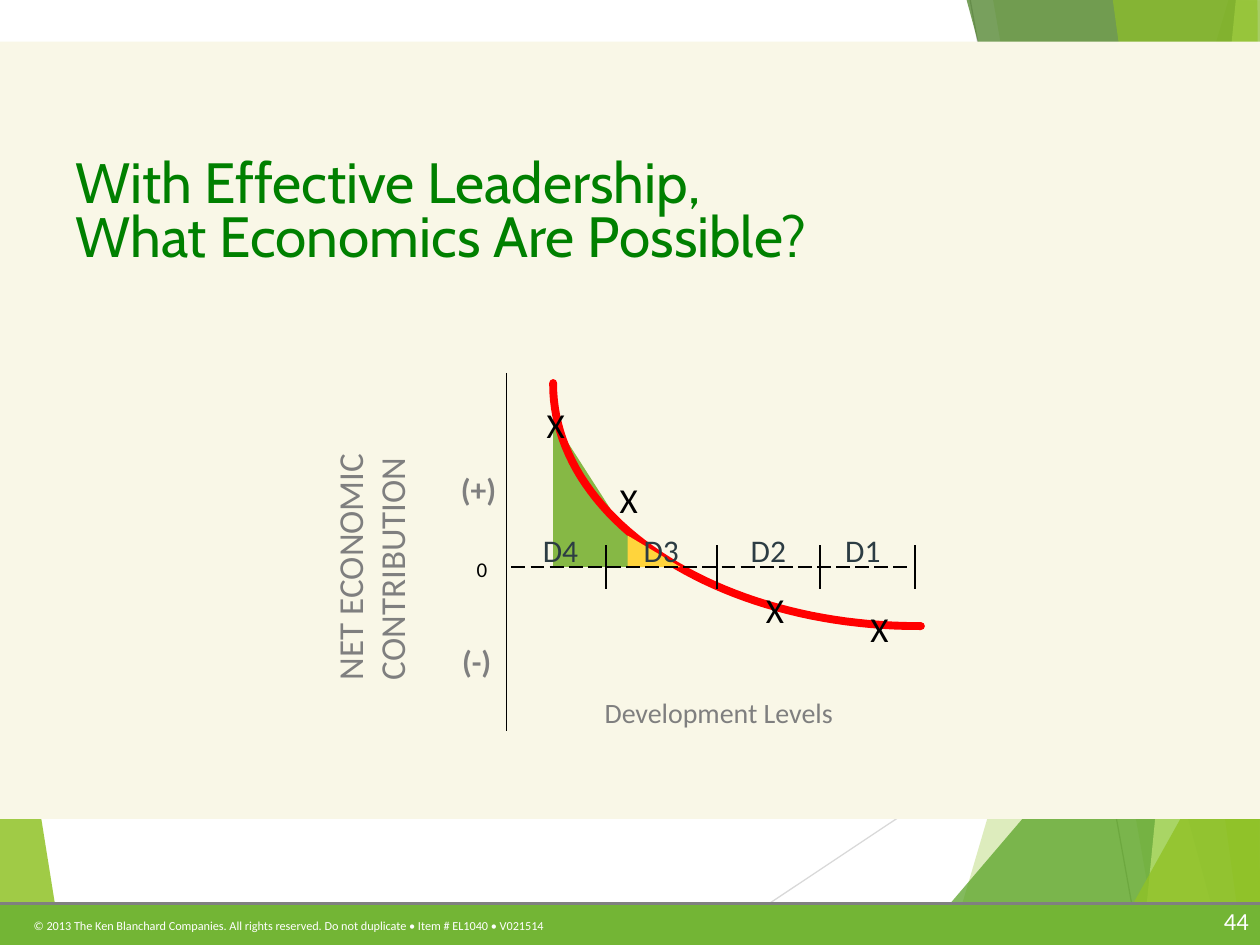
from math import cos, pi, sin

from lxml import etree
from pptx import Presentation
from pptx.dml.color import RGBColor
from pptx.enum.dml import MSO_LINE
from pptx.enum.shapes import MSO_CONNECTOR, MSO_SHAPE
from pptx.enum.text import MSO_ANCHOR, MSO_AUTO_SIZE, PP_ALIGN
from pptx.oxml.ns import qn
from pptx.util import Pt

RECT, TRIANGLE = MSO_SHAPE.RECTANGLE, MSO_SHAPE.RIGHT_TRIANGLE
STRAIGHT, LONG_DASH = MSO_CONNECTOR.STRAIGHT, MSO_LINE.LONG_DASH
LEFT, CENTER, RIGHT = PP_ALIGN.LEFT, PP_ALIGN.CENTER, PP_ALIGN.RIGHT
TOP, NO_FIT = MSO_ANCHOR.TOP, MSO_AUTO_SIZE.NONE

WIDTH, HEIGHT = 720, 540
ZERO_Y = 324
GRAY, BLACK, WHITE, LIME = "7F7F7F", "000000", "FFFFFF", "90C226"

# Theme facets: outline, colour, opacity in percent
LEFT_FACET = ([(-0.7, 316), (35.3, 540.7), (-0.7, 540)], LIME, 85)
RIGHT_FACETS = [
    ([(702, 0), (542.9, 540), (721.4, 540.7), (720.7, 0.7)], LIME, 30),
    ([(567.4, -0.7), (661.7, 540), (720.7, 540), (720.7, -0.7)], LIME, 20),
    ([(522.7, 540), (720, 308.9), (720.7, 540)], "54A021", 72),
    ([(552.2, -0.7), (698.4, 540), (720.7, 539.3), (720.7, -0.7)], "3F7819", 70),
    ([(706.3, -0.7), (653, 540), (720.7, 540), (720, -0.7)], "C0E474", 70),
    ([(635.8, -0.7), (709.9, 540), (720, 540), (718.6, -0.7)], LIME, 65),
    ([(634.3, 540), (720.7, 385.2), (720.7, 539.3)], LIME, 80),
]

# Development levels: label, label left, tick at the right end
LEVELS = [("D4", 303.1, 346.3), ("D3", 360.7, 409.7),
          ("D2", 421.9, 468.7), ("D1", 475.9, 522.7)]


def rgb(color):
    return RGBColor.from_string(color)


def set_all(target, values):
    for name, value in values.items():
        setattr(target, name, value)


def write(shape, text, size, color, font="Calibri", bold=False, align=LEFT,
          spacing=None, wrap=True):
    frame = shape.text_frame
    set_all(frame, {"text": text, "word_wrap": wrap, "auto_size": NO_FIT,
                    "vertical_anchor": TOP})
    paragraph = frame.paragraphs[0]
    set_all(paragraph, {"alignment": align, "line_spacing": spacing})
    for run in paragraph.runs:
        set_all(run.font, {"name": font, "size": Pt(size), "bold": bold})
        run.font.color.rgb = rgb(color)


def add_label(slide, text, left, top, width, height, size, color, **style):
    box = slide.shapes.add_textbox(Pt(left), Pt(top), Pt(width), Pt(height))
    write(box, text, size, color, **style)
    return box


def add_block(slide, preset, left, top, width, height, color):
    block = slide.shapes.add_shape(preset, Pt(left), Pt(top), Pt(width), Pt(height))
    block.shadow.inherit = False
    block.fill.solid()
    block.fill.fore_color.rgb = rgb(color)
    block.line.fill.background()


def add_line(slide, x1, y1, x2, y2, color=BLACK, weight=1, dash=None):
    line = slide.shapes.add_connector(STRAIGHT, Pt(x1), Pt(y1), Pt(x2), Pt(y2))
    line.line.color.rgb = rgb(color)
    set_all(line.line, {"width": Pt(weight), "dash_style": dash})
    etree.SubElement(line._element.spPr, qn("a:effectLst"))


def add_outline(slide, points, close):
    (x, y), *rest = [(Pt(px), Pt(py)) for px, py in points]
    builder = slide.shapes.build_freeform(x, y)
    builder.add_line_segments(rest, close=close)
    outline = builder.convert_to_shape()
    outline.shadow.inherit = False
    return outline


def add_facet(slide, points, color, opacity):
    facet = add_outline(slide, points, True)
    facet.line.fill.background()
    facet.fill.solid()
    facet.fill.fore_color.rgb = rgb(color)
    color_node = facet._element.spPr.find(qn("a:solidFill"))[0]
    etree.SubElement(color_node, qn("a:alpha"), val=str(opacity * 1000))


def add_curve(slide):
    """Quarter ellipse falling from upper left to lower right."""
    center_x, center_y, radius_x, radius_y, steps = 524.2, 219.6, 208.1, 138.2, 48
    angles = [pi / 2 * step / steps for step in range(steps + 1)]
    arc = [(center_x - radius_x * cos(a), center_y + radius_y * sin(a)) for a in angles]
    curve = add_outline(slide, [(316.1, 218.9), *arc, (526.3, 357.8)], False)
    curve.fill.background()
    curve.line.color.rgb = rgb("FF0000")
    curve.line.width = Pt(4.5)
    line_node = curve._element.spPr.find(qn("a:ln"))
    line_node.set("cap", "rnd")
    etree.SubElement(line_node, qn("a:round"))


def add_mark(slide, left, top):
    add_label(slide, "X", left, top, 28.8, 31.7, 20, BLACK)


def add_theme(slide):
    add_facet(slide, *LEFT_FACET)
    add_line(slide, 404, 540, 720.7, 329, "D9D9D9", 0.75)
    add_line(slide, 554.4, 0, 650.9, 540, "BFBFBF", 0.75)
    for facet in RIGHT_FACETS:
        add_facet(slide, *facet)

    # Footer band
    add_block(slide, RECT, 0, 516.2, WIDTH, 25.2, "73B535")
    add_label(slide, "© 2013 The Ken Blanchard Companies. All rights reserved. "
              "Do not duplicate • Item # EL1040 • V021514",
              12.2, 521.3, 542.2, 22.3, 7, WHITE)
    add_line(slide, 0, 516.2, WIDTH, 516.2, "808080", 1.5)
    add_label(slide, "44", 669.6, 514.1, 51.1, 24.5, 14, WHITE, align=RIGHT)


def place_title(slide):
    title = slide.shapes.title
    set_all(title, {"left": Pt(36), "top": Pt(87.8),
                    "width": Pt(684), "height": Pt(38.2)})
    write(title, "With Effective Leadership,\vWhat Economics Are Possible?",
          32.4, "008000", font="Cabin", spacing=0.8)
    slide.shapes._spTree.append(title._element)  # in front of the panel


def add_axis_labels(slide):
    add_line(slide, 289.4, 213.1, 289.4, 417.6)
    contribution = add_label(slide, "NET ECONOMIC CONTRIBUTION",
                             123.8, 280.1, 175.7, 55.4, 20, GRAY)
    contribution.rotation = 270
    for sign, left, top in [("(+)", 256.3, 265), ("(-)", 257, 363.6)]:
        add_label(slide, sign, left, top, 45.4, 28.8, 18, GRAY, bold=True)
    add_label(slide, "Development Levels", 338.4, 393.8, 200.9, 26.6, 16, GRAY)
    add_label(slide, "0", 265, 314.6, 20.9, 21.6, 12, BLACK, align=CENTER, wrap=False)


def add_level_scale(slide):
    add_line(slide, 292.3, ZERO_Y, 520.6, ZERO_Y, dash=LONG_DASH)
    for level, left, tick in LEVELS:
        add_line(slide, tick, ZERO_Y - 12.4, tick, ZERO_Y + 12.8)
        add_label(slide, level, left, 300.2, 39.6, 28.8, 18, "2C3C43")


def main():
    deck = Presentation()
    set_all(deck, {"slide_width": Pt(WIDTH), "slide_height": Pt(HEIGHT)})
    slide = deck.slides.add_slide(deck.slide_layouts[5])

    add_theme(slide)
    add_block(slide, RECT, 0, 23.8, WIDTH, 444.2, "F9F7E7")
    add_block(slide, TRIANGLE, 316.1, 239.8, 54, 84.2, "86B845")
    place_title(slide)

    # Diagram
    add_axis_labels(slide)
    add_curve(slide)
    for left, top in [(490.3, 343.4), (430.6, 332.6), (305.3, 226.8)]:
        add_mark(slide, left, top)
    add_block(slide, TRIANGLE, 358.6, 306, 30.2, 18, "FFD43C")
    add_level_scale(slide)
    add_mark(slide, 347, 270)

    deck.save("out.pptx")


if __name__ == "__main__":
    main()
